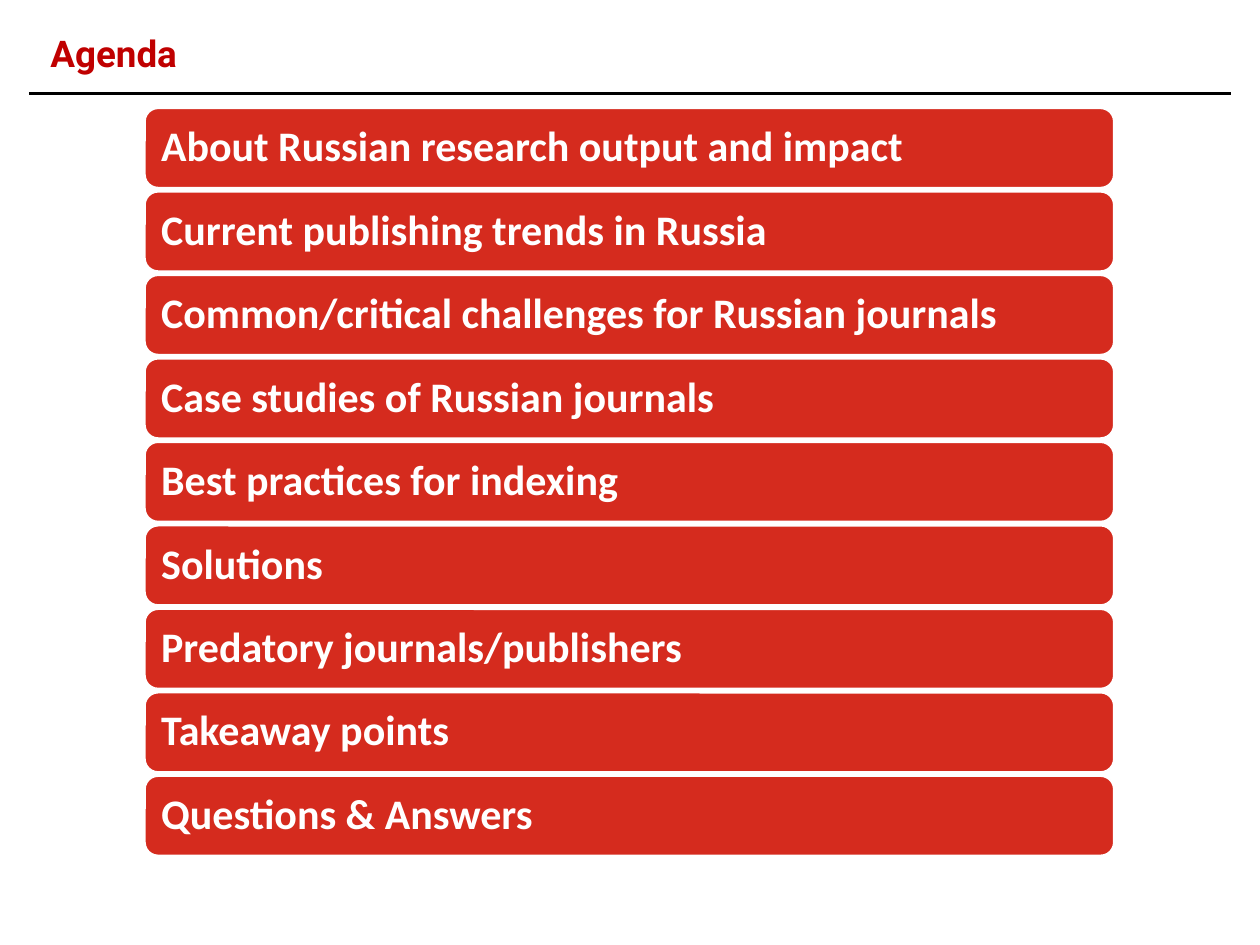
from dataclasses import dataclass

from lxml.etree import SubElement
from pptx import Presentation
from pptx.dml.color import RGBColor
from pptx.enum.shapes import MSO_CONNECTOR as Connector, MSO_SHAPE as Shape
from pptx.enum.text import MSO_ANCHOR as Anchor, MSO_AUTO_SIZE as AutoSize, PP_ALIGN as Align
from pptx.oxml.ns import qn
from pptx.util import Inches, Pt


@dataclass(frozen=True)
class Theme:
    title_color: RGBColor = RGBColor(0xC0, 0x00, 0x00)
    bar_fill: RGBColor = RGBColor(0xD5, 0x2B, 0x1E)
    white: RGBColor = RGBColor(0xFF, 0xFF, 0xFF)
    rule_color: RGBColor = RGBColor(0x00, 0x00, 0x00)
    title_font: str = "Roboto"
    bar_font: str = "Calibri"
    title_size: float = 21
    bar_size: float = 24


@dataclass(frozen=True)
class AgendaBar:
    text: str
    top: float
    left: float = 1.15
    width: float = 7.69
    height: float = 0.63


THEME = Theme()
TOPICS = [
    "About Russian research output and impact",
    "Current publishing trends in Russia",
    "Common/critical challenges for Russian journals",
    "Case studies of Russian journals",
    "Best practices for indexing",
    "Solutions",
    "Predatory journals/publishers",
    "Takeaway points",
    "Questions & Answers",
]
FIRST_TOP, LAST_TOP = 0.86, 6.16


def write_text(box, text: str, *, font: str, size: float, color: RGBColor,
               anchor: Anchor, inset_y: float) -> None:
    frame = box.text_frame
    frame.word_wrap = True
    frame.auto_size = AutoSize.NONE
    frame.vertical_anchor = anchor
    frame.margin_left = frame.margin_right = Inches(0.1)
    frame.margin_top = frame.margin_bottom = Inches(inset_y)
    para = frame.paragraphs[0]
    para.alignment = Align.LEFT
    para.line_spacing = 0.9
    para.space_before = Pt(0)
    span = para.add_run()
    span.text = text
    span.font.name = font
    span.font.size = Pt(size)
    span.font.bold = True
    span.font.color.rgb = color


def add_title(page, text: str) -> None:
    title = page.shapes.title
    title.left, title.top = Inches(0.3), Inches(0.23)
    title.width, title.height = Inches(9.7), Inches(0.56)
    write_text(title, text, font=THEME.title_font, size=THEME.title_size,
               color=THEME.title_color, anchor=Anchor.TOP, inset_y=0.05)


def add_title_rule(page) -> None:
    rule = page.shapes.add_connector(
        Connector.STRAIGHT, Inches(0.23), Inches(0.74), Inches(9.77), Inches(0.74))
    rule.line.color.rgb = THEME.rule_color
    rule.line.width = Pt(1.5)
    SubElement(rule.element.spPr, qn("a:effectLst"))


def add_bar(page, bar: AgendaBar) -> None:
    box = page.shapes.add_shape(
        Shape.ROUNDED_RECTANGLE, Inches(bar.left), Inches(bar.top),
        Inches(bar.width), Inches(bar.height))
    box.shadow.inherit = False
    box.fill.solid()
    box.fill.fore_color.rgb = THEME.bar_fill
    box.line.color.rgb = THEME.white
    box.line.width = Pt(1)
    write_text(box, bar.text, font=THEME.bar_font, size=THEME.bar_size,
               color=THEME.white, anchor=Anchor.MIDDLE, inset_y=0.1)


def main() -> None:
    deck = Presentation()
    deck.slide_width, deck.slide_height = Inches(10), Inches(7.5)
    page = deck.slides.add_slide(deck.slide_layouts.get_by_name("Title Only"))
    add_title_rule(page)
    add_title(page, "Agenda")
    step = (LAST_TOP - FIRST_TOP) / (len(TOPICS) - 1)
    for index, topic in enumerate(TOPICS):
        add_bar(page, AgendaBar(topic, FIRST_TOP + index * step))
    deck.save("out.pptx")


if __name__ == "__main__":
    main()
